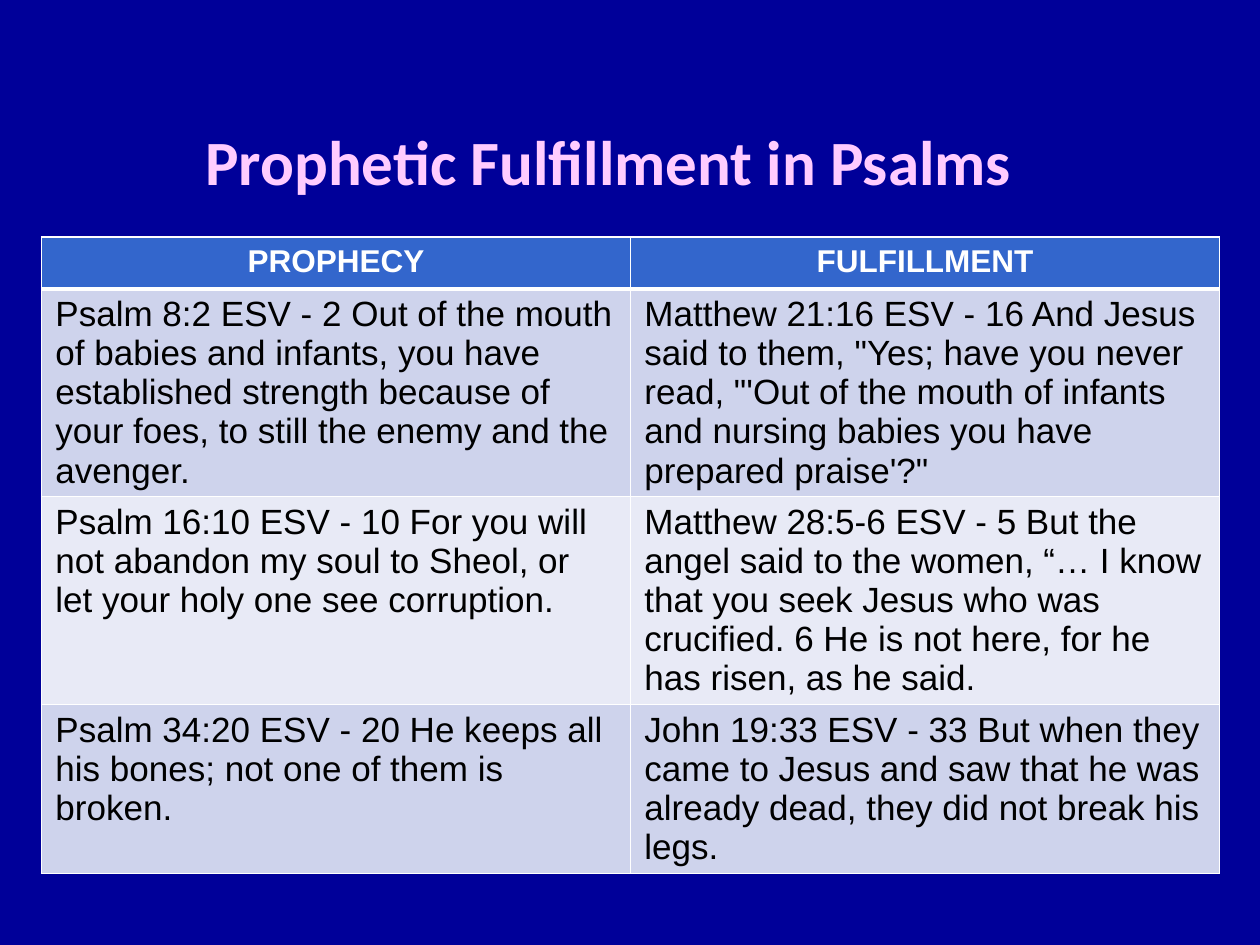
import pptx
import pptx.dml.color
import pptx.enum.text
import pptx.oxml
import pptx.oxml.ns
import pptx.util

RGBColor = pptx.dml.color.RGBColor
Inches, Pt = pptx.util.Inches, pptx.util.Pt
PP_ALIGN, MSO_ANCHOR = pptx.enum.text.PP_ALIGN, pptx.enum.text.MSO_ANCHOR

NAVY = RGBColor(0x00, 0x00, 0x99)
PINK = RGBColor(0xFF, 0xCC, 0xFF)
BLUE = RGBColor(0x33, 0x66, 0xCC)
BAND_DARK = RGBColor(0xCE, 0xD3, 0xEC)
BAND_LIGHT = RGBColor(0xE8, 0xEA, 0xF6)
WHITE = RGBColor(0xFF, 0xFF, 0xFF)
BLACK = RGBColor(0x00, 0x00, 0x00)

TITLE = {"name": "Calibri", "size": Pt(36), "bold": True, "color": PINK}
HEAD = {"name": "Arial", "size": Pt(18), "bold": True, "color": WHITE}
BODY = {"name": "Arial", "size": Pt(20), "bold": False, "color": BLACK}

WIDTH, HEIGHT = 10, 7.5
ROW_HEIGHTS = [0.41, 1.64, 1.65, 1.34]
ROWS = [
    ("PROPHECY", "FULFILLMENT"),
    ("Psalm 8:2 ESV - 2 Out of the mouth of babies and infants, you have "
     "established strength because of your foes, to still the enemy and the avenger.",
     "Matthew 21:16 ESV - 16 And Jesus said to them, \"Yes; have you never read, "
     "\"'Out of the mouth of infants and nursing babies you have prepared praise'?\""),
    ("Psalm 16:10 ESV - 10 For you will not abandon my soul to Sheol, or let your "
     "holy one see corruption.",
     "Matthew 28:5-6 ESV - 5 But the angel said to the women, “… I know that you seek "
     "Jesus who was crucified. 6 He is not here, for he has risen, as he said."),
    ("Psalm 34:20 ESV - 20 He keeps all his bones; not one of them is broken.",
     "John 19:33 ESV - 33 But when they came to Jesus and saw that he was already "
     "dead, they did not break his legs."),
]


class SlideBuilder:
    def __init__(self, prs):
        self.s = prs.slides.add_slide(prs.slide_layouts[5])
        self.s.background.fill.solid()
        self.s.background.fill.fore_color.rgb = NAVY

    def box(self, left, top, width, height):
        """Turn shares of the slide's size into lengths."""
        return (Inches(left * WIDTH), Inches(top * HEIGHT),
                Inches(width * WIDTH), Inches(height * HEIGHT))

    def add_text(self, tf, text, style, align):
        p = tf.paragraphs[0]
        p.alignment = align
        r = p.add_run()
        r.text = text
        for key, value in style.items():
            if key == "color":
                r.font.color.rgb = value
            else:
                setattr(r.font, key, value)

    def title(self, text, *shares):
        sp = self.s.shapes.title
        sp.left, sp.top, sp.width, sp.height = self.box(*shares)
        sp.text_frame.vertical_anchor = MSO_ANCHOR.MIDDLE
        self.add_text(sp.text_frame, text, TITLE, PP_ALIGN.CENTER)

    def borders(self, cell, **widths):
        """Draw white cell borders, with widths in points by side: L, R, T, B."""
        for side, width in widths.items():
            cell._tc.get_or_add_tcPr().append(pptx.oxml.parse_xml(
                f'<a:ln{side} {pptx.oxml.ns.nsdecls("a")} w="{Pt(width)}">'
                f'<a:solidFill><a:srgbClr val="{WHITE}"/></a:solidFill></a:ln{side}>'))

    def table(self, rows, heights, *shares):
        table = self.s.shapes.add_table(len(rows), len(rows[0]), *self.box(*shares)).table
        for i, (texts, height) in enumerate(zip(rows, heights)):
            table.rows[i].height = Inches(height)
            if i == 0:
                style, align, fill = HEAD, PP_ALIGN.CENTER, BLUE
            else:
                style, align = BODY, PP_ALIGN.LEFT
                fill = BAND_DARK if i % 2 else BAND_LIGHT
            for j, text in enumerate(texts):
                cell = table.cell(i, j)
                cell.margin_left = cell.margin_right = Inches(0.11)
                cell.margin_top = cell.margin_bottom = Inches(0.05)
                self.borders(cell, L=1, R=1, T=3 if i == 1 else 1, B=3 if i == 0 else 1)
                cell.fill.solid()
                cell.fill.fore_color.rgb = fill
                self.add_text(cell.text_frame, text, style, align)


def main():
    prs = pptx.Presentation()
    prs.slide_width, prs.slide_height = Inches(WIDTH), Inches(HEIGHT)
    slide = SlideBuilder(prs)
    slide.title("Prophetic Fulfillment in Psalms", 0.058, 0.09, 0.85, 0.16)
    slide.table(ROWS, ROW_HEIGHTS, 0.033, 0.251, 0.935, 0.672)
    prs.save("out.pptx")


if __name__ == "__main__":
    main()
